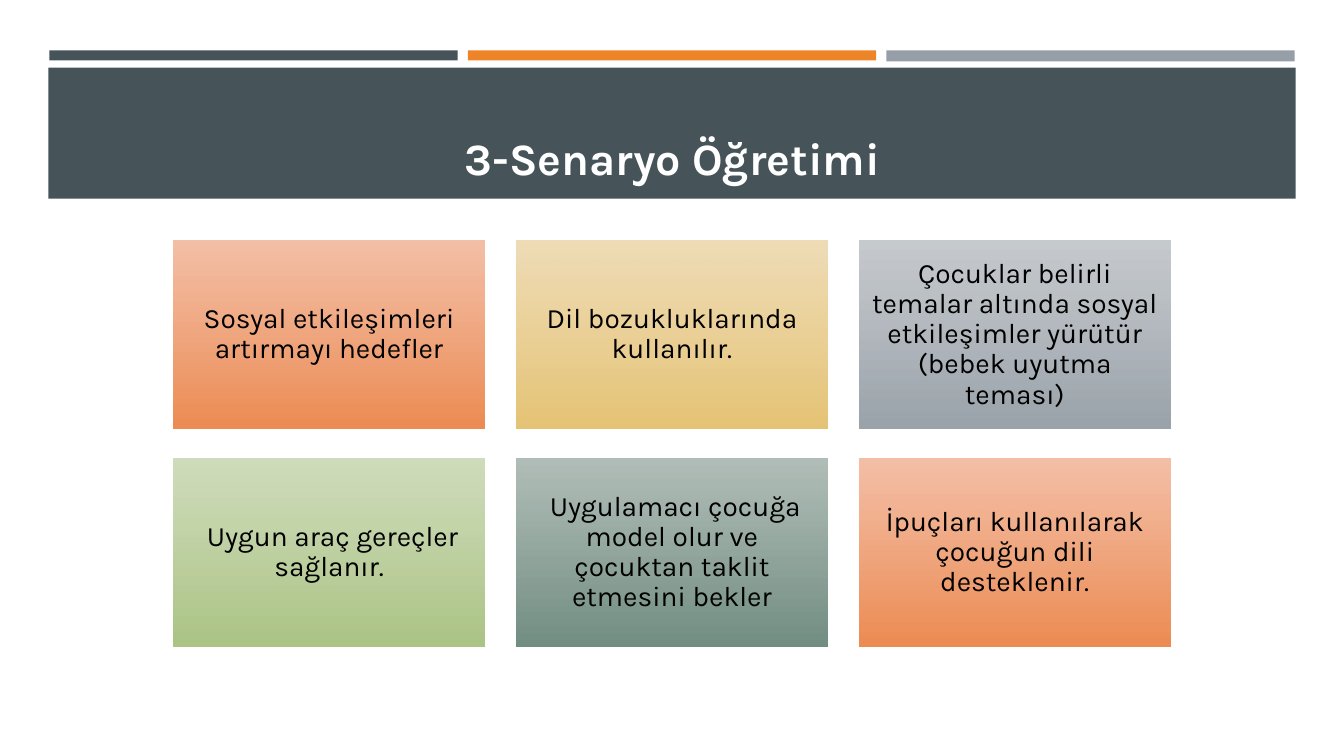
import dataclasses

import pptx
import pptx.dml.color
import pptx.enum.shapes
import pptx.enum.text
import pptx.oxml.ns
import pptx.util
from lxml import etree

PX = 9144  # EMU per px, 100 px to the inch
FONT = "Karla"
COLORS = {
    "slate": "465359", "orange": "ED8428", "gray": "969FA7",
    "white": "FFFFFF", "black": "000000",
}
# Top and bottom colour of each card tone
GRADIENTS = {
    "coral": ("F3B89D", "ED8C53"),
    "sand": ("EED9AE", "E6C476"),
    "silver": ("C0C5C9", "9BA3AB"),
    "green": ("CAD9B4", "ACC485"),
    "teal": ("A8B6B0", "728E82"),
}
TOP_OPACITY = 90000


@dataclasses.dataclass(frozen=True)
class Box:
    left: int
    top: int
    width: int
    height: int

    def emu(self) -> list[int]:
        return [n * PX for n in dataclasses.astuple(self)]


@dataclasses.dataclass(frozen=True)
class Band:
    box: Box
    color: str


@dataclasses.dataclass(frozen=True)
class Card:
    text: str
    tone: str


BANDS = [
    Band(Box(49, 50, 405, 10), "slate"),
    Band(Box(464, 50, 405, 10), "orange"),
    Band(Box(879, 50, 405, 11), "gray"),
    Band(Box(48, 67, 1237, 130), "slate"),
]
CARDS = [
    Card("Sosyal etkileşimleri artırmayı hedefler", "coral"),
    Card("Dil bozukluklarında kullanılır.", "sand"),
    Card("Çocuklar belirli temalar altında sosyal etkileşimler yürütür "
         "(bebek uyutma teması)", "silver"),
    Card(" Uygun araç gereçler sağlanır.", "green"),
    Card(" Uygulamacı çocuğa model olur ve çocuktan taklit etmesini bekler", "teal"),
    Card("İpuçları kullanılarak çocuğun dili desteklenir.", "coral"),
]
COLUMNS = 3
FIRST_CARD = Box(172, 239, 309, 186)
PITCH_X, PITCH_Y = 340, 216


def rgb(value: str) -> pptx.dml.color.RGBColor:
    return pptx.dml.color.RGBColor.from_string(value)


def add_rect(slide, box: Box):
    rect = slide.shapes.add_shape(
        pptx.enum.shapes.MSO_SHAPE.RECTANGLE, *box.emu())
    rect.shadow.inherit = False
    rect.line.fill.background()
    return rect


def write(shape, text: str, *, size: int, color: str, anchor: str,
          bold: bool = False, spacing: float = 1.0, inset: int = 8) -> None:
    frame = shape.text_frame
    frame.word_wrap = True
    frame.vertical_anchor = pptx.enum.text.MSO_ANCHOR[anchor]
    frame.margin_left = frame.margin_right = inset * PX
    frame.margin_top = frame.margin_bottom = inset * PX
    paragraph = frame.paragraphs[0]
    paragraph.alignment = pptx.enum.text.PP_ALIGN.CENTER
    paragraph.line_spacing = spacing
    run = paragraph.add_run()
    run.text = text
    run.font.name = FONT
    run.font.size = pptx.util.Pt(size)
    run.font.bold = bold
    run.font.color.rgb = rgb(COLORS[color])


def add_band(slide, band: Band) -> None:
    rect = add_rect(slide, band.box)
    rect.fill.solid()
    rect.fill.fore_color.rgb = rgb(COLORS[band.color])


def add_card(slide, card: Card, box: Box) -> None:
    rect = add_rect(slide, box)
    rect.fill.gradient()
    rect.fill.gradient_angle = 270
    for stop, tint in zip(rect.fill.gradient_stops, GRADIENTS[card.tone]):
        stop.color.rgb = rgb(tint)
    top_color = rect.element.xpath(".//a:gs[1]/a:srgbClr")[0]
    etree.SubElement(top_color, pptx.oxml.ns.qn("a:alpha"), val=str(TOP_OPACITY))
    write(rect, card.text, size=20, color="black", anchor="MIDDLE", spacing=0.9)


def main() -> None:
    deck = pptx.Presentation()
    deck.slide_width, deck.slide_height = pptx.util.Inches(13.33), pptx.util.Inches(7.5)
    slide = deck.slides.add_slide(deck.slide_layouts[6])

    # Header bands and title
    for band in BANDS:
        add_band(slide, band)
    title = slide.shapes.add_textbox(*Box(64, 77, 1206, 111).emu())
    write(title, "3-Senaryo Öğretimi", size=32, color="white",
          anchor="BOTTOM", bold=True, inset=5)

    # Card grid
    for index, card in enumerate(CARDS):
        row, column = divmod(index, COLUMNS)
        add_card(slide, card, dataclasses.replace(
            FIRST_CARD,
            left=FIRST_CARD.left + column * PITCH_X,
            top=FIRST_CARD.top + row * PITCH_Y))

    deck.save("out.pptx")


if __name__ == "__main__":
    main()
